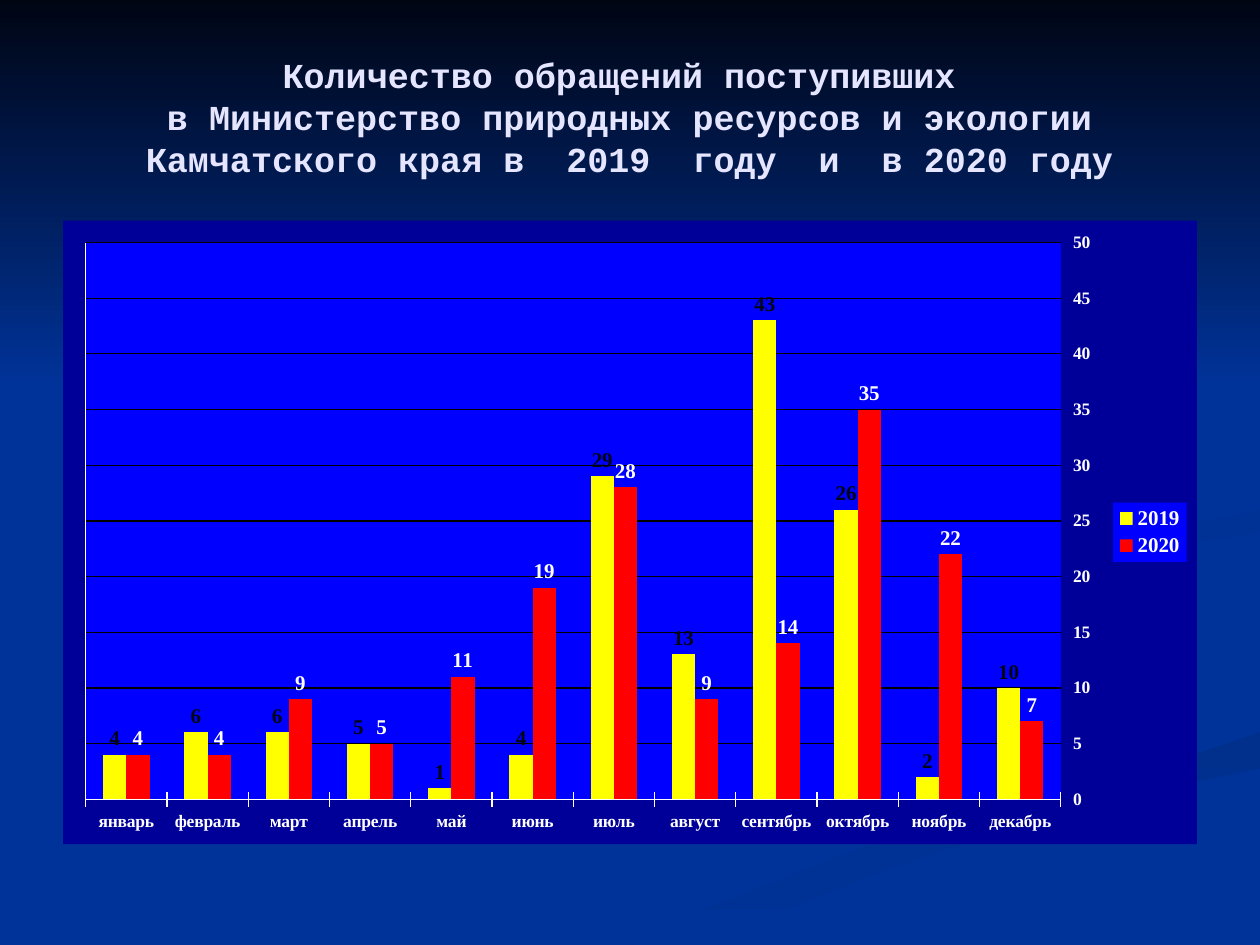
from lxml import etree
from pptx import Presentation
from pptx import util as u
from pptx.chart import data as cd
from pptx.dml.color import RGBColor
from pptx.enum import chart as ce, shapes, text
from pptx.oxml.ns import qn

Cm, Pt = u.Cm, u.Pt
HUES = {
    "night": "000514", "blue": "003399", "sweep": "002F8C", "edge": "003091",
    "title": "E5E5FF", "frame": "000099", "plot": "0000FF", "white": "FFFFFF",
    "black": "000000", "old": "FFFF00", "new": "FF0000",
}
MONTHS = ["январь", "февраль", "март", "апрель", "май", "июнь", "июль",
          "август", "сентябрь", "октябрь", "ноябрь", "декабрь"]
# Name, bar colour, label colour, values
YEARS = [
    ("2019", "old", "night", [4, 6, 6, 5, 1, 4, 29, 13, 43, 26, 2, 10]),
    ("2020", "new", "white", [4, 4, 9, 5, 11, 19, 28, 9, 14, 35, 22, 7]),
]
# Outlines as fractions of their boxes
WIDE = [(0, 1), (.14, 1), (.25, .83), (.39, .66), (.57, .48), (.72, .35),
        (.9, .23), (1, .17), (1, 0), (.87, .13), (.66, .29), (.53, .39),
        (.39, .52), (.26, .67), (.13, .82), (.03, .99)]
SLIM = [(0, .62), (.02, .76), (.07, .86), (.21, 1), (.13, .87), (.11, .74),
        (.16, .61), (.36, .44), (.71, .29), (1, .19), (1, 0), (.86, .07),
        (.54, .17), (.25, .3), (.08, .42)]


def hue(name):
    return RGBColor.from_string(HUES[name])


def shade(shape, start, end, angle):
    shape.shadow.inherit = False
    shape.line.fill.background()
    shape.fill.gradient()
    shape.fill.gradient_angle = angle
    for stop, name, place in zip(shape.fill.gradient_stops, (start, end), (0, 1)):
        stop.color.rgb = hue(name)
        stop.position = place


def style(font, size, color, face="Times New Roman", bold=True):
    font.size, font.name, font.bold = Pt(size), face, bold
    font.color.rgb = hue(color)


def write(slide, words, box, size, color, face, align):
    frame = slide.shapes.add_textbox(*box).text_frame
    frame.word_wrap = True
    frame.vertical_anchor = text.MSO_ANCHOR.MIDDLE
    frame.text = words
    para = frame.paragraphs[0]
    para.alignment = align
    for run in para.runs:
        style(run.font, size, color, face)


def sweep(slide, points, box, start, angle):
    left, top, wide, high = box
    spots = [(int(left + x * wide), int(top + y * high)) for x, y in points]
    form = slide.shapes.build_freeform(*spots[0])
    form.add_line_segments(spots[1:], close=True)
    shade(form.convert_to_shape(), start, "blue", angle)


def backdrop(slide, box):
    left, top, wide, high = box
    slide.background.fill.solid()
    slide.background.fill.fore_color.rgb = hue("blue")
    sweep(slide, WIDE, (left + wide * .5, top + high * .775, wide * .5, high * .225),
          "sweep", 270)
    sweep(slide, SLIM, (left + wide * .78, top + high * .54, wide * .22, high * .125),
          "edge", 315)
    sky = slide.shapes.add_shape(shapes.MSO_SHAPE.RECTANGLE,
                                 left, top, wide, int(high * .41))
    shade(sky, "night", "blue", 270)


def paint(color):
    """Make the chart XML for a solid fill without an outline."""
    props = etree.Element(qn("c:spPr"))
    solid = etree.SubElement(props, qn("a:solidFill"))
    etree.SubElement(solid, qn("a:srgbClr"), val=HUES[color])
    line = etree.SubElement(props, qn("a:ln"))
    etree.SubElement(line, qn("a:noFill"))
    return props


def place(x, y, w, h, inner=False):
    """Make the chart XML for a fixed layout in fractions of the chart."""
    layout = etree.Element(qn("c:layout"))
    manual = etree.SubElement(layout, qn("c:manualLayout"))
    parts = [("layoutTarget", "inner")] if inner else []
    parts += [("xMode", "edge"), ("yMode", "edge"),
              ("x", x), ("y", y), ("w", w), ("h", h)]
    for tag, val in parts:
        etree.SubElement(manual, qn("c:" + tag), val=str(val))
    return layout


def bars(slide, box):
    data = cd.CategoryChartData()
    data.categories = MONTHS
    for name, _, _, values in YEARS:
        data.add_series(name, values)
    chart = slide.shapes.add_chart(ce.XL_CHART_TYPE.COLUMN_CLUSTERED, *box, data).chart
    chart.has_title = False
    style(chart.font, 10, "white")

    # Columns and their labels
    plot = chart.plots[0]
    plot.vary_by_categories = False
    plot.gap_width, plot.overlap = 150, 0
    for series, (_, color, ink, _) in zip(plot.series, YEARS):
        series.format.fill.solid()
        series.format.fill.fore_color.rgb = hue(color)
        labels = series.data_labels
        labels.show_value = True
        labels.position = ce.XL_LABEL_POSITION.OUTSIDE_END
        style(labels.font, 12, ink)

    # Axes: the scale is read on the right
    months, scale = chart.category_axis, chart.value_axis
    months.major_tick_mark = ce.XL_TICK_MARK.CROSS
    scale.major_tick_mark = ce.XL_TICK_MARK.NONE
    scale.tick_label_position = ce.XL_TICK_LABEL_POSITION.HIGH
    scale.minimum_scale, scale.maximum_scale, scale.major_unit = 0, 50, 5
    grid = scale.major_gridlines.format.line
    for line, color in ((months.format.line, "white"), (scale.format.line, "white"),
                        (grid, "black")):
        line.width = Pt(.75)
        line.color.rgb = hue(color)

    # Legend
    chart.has_legend = True
    key = chart.legend
    key.position = ce.XL_LEGEND_POSITION.RIGHT
    key.include_in_layout = False
    style(key.font, 12, "white")

    # Fills and fixed layout
    root = chart.element
    area = root.find(".//" + qn("c:plotArea"))
    legend = root.find(".//" + qn("c:legend"))
    for part in (area, legend):
        for old in part.findall(qn("c:layout")):
            part.remove(old)
    area.insert(0, place(.02, .035, .86, .893, inner=True))
    area.append(paint("plot"))
    legend.find(qn("c:legendPos")).addnext(place(.926, .452, .065, .095))
    for part, color in ((legend, "plot"), (root, "frame")):
        part.find(qn("c:txPr")).addprevious(paint(color))


def main():
    deck = Presentation()
    deck.slide_width, deck.slide_height = Cm(25.4), Cm(19.05)
    slide = deck.slides.add_slide(deck.slide_layouts[6])
    backdrop(slide, (0, 0, deck.slide_width, deck.slide_height))
    write(slide, "Количество обращений поступивших \vв Министерство природных ресурсов "
          "и экологии Камчатского края в  2019  году  и  в 2020 году",
          (Cm(1.27), Cm(.76), Cm(22.86), Cm(3.18)), size=20, color="title",
          face="Courier New", align=text.PP_ALIGN.CENTER)
    bars(slide, (Cm(1.27), Cm(4.45), Cm(22.86), Cm(12.57)))
    deck.save("out.pptx")


if __name__ == "__main__":
    main()
